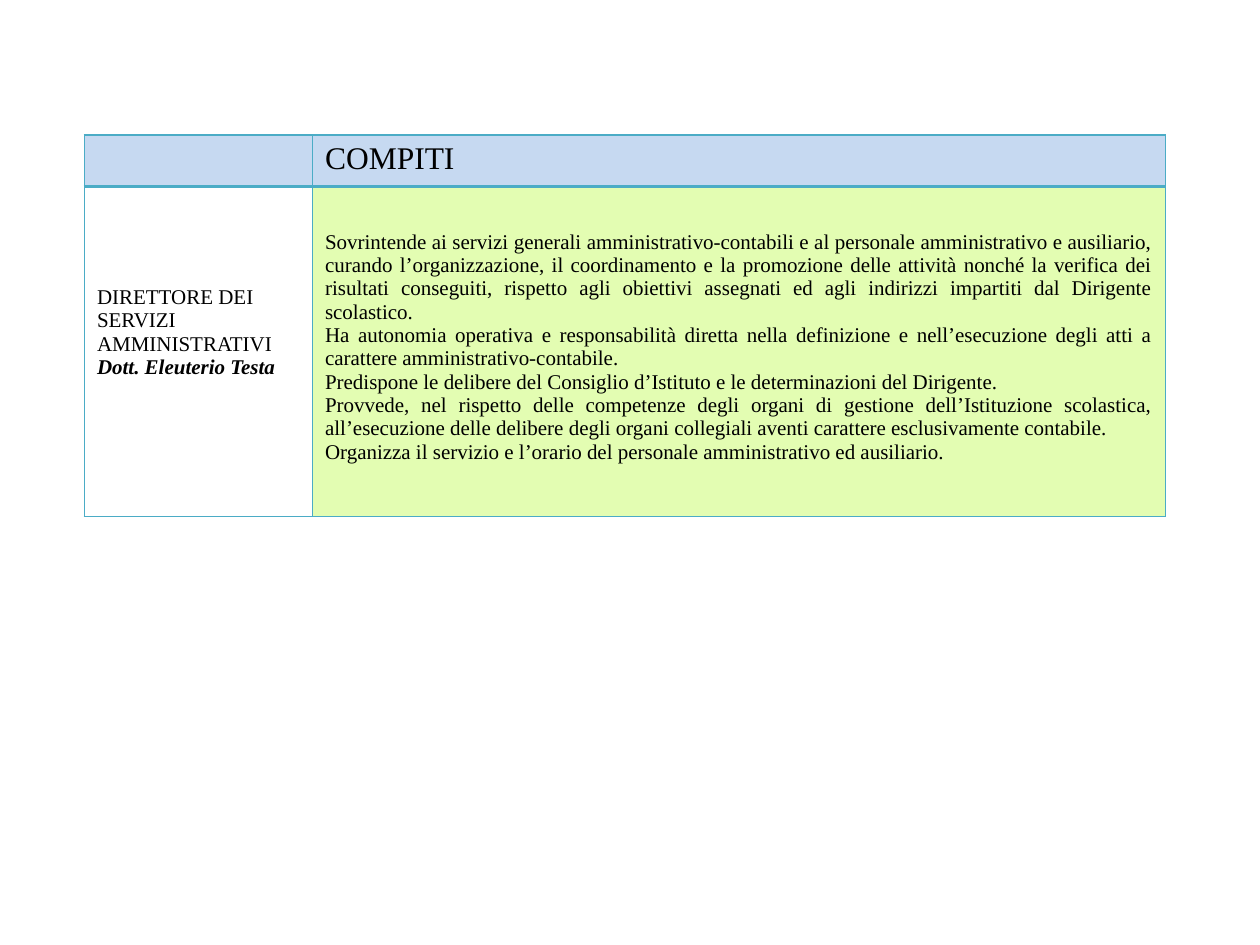
"""Build a slide with a table of the administrative director's duties."""
from lxml import etree
from pptx import Presentation
from pptx import util as u
from pptx.dml.color import RGBColor
from pptx.enum import text
from pptx.oxml.ns import qn

COLORS = {"border": "4BACC6", "header": "C6D9F1", "duties": "AFFC24", "text": "000000"}
LEFT, JUSTIFY = text.PP_ALIGN.LEFT, text.PP_ALIGN.JUSTIFY
ROLE = ["DIRETTORE DEI SERVIZI AMMINISTRATIVI", "Dott. Eleuterio Testa"]
DUTIES = [
    "Sovrintende ai servizi generali amministrativo‐contabili e al personale amministrativo e ausiliario, "
    "curando l’organizzazione, il coordinamento e la promozione delle attività nonché la verifica dei "
    "risultati conseguiti, rispetto agli obiettivi assegnati ed agli indirizzi impartiti dal Dirigente scolastico.",
    "Ha autonomia operativa e responsabilità diretta nella definizione e nell’esecuzione degli atti a "
    "carattere amministrativo‐contabile.",
    "Predispone le delibere del Consiglio d’Istituto e le determinazioni del Dirigente.",
    "Provvede, nel rispetto delle competenze degli organi di gestione dell’Istituzione scolastica, "
    "all’esecuzione delle delibere degli organi collegiali aventi carattere esclusivamente contabile.",
    "Organizza il servizio e l’orario del personale amministrativo ed ausiliario.",
]


def add_borders(cell, bottom_width):
    properties = cell._tc.get_or_add_tcPr()
    for side, width in (("L", 1), ("R", 1), ("T", 1), ("B", bottom_width)):
        line = etree.SubElement(properties, qn(f"a:ln{side}"), w=str(u.Pt(width)))
        fill = etree.SubElement(line, qn("a:solidFill"))
        etree.SubElement(fill, qn("a:srgbClr"), val=COLORS["border"])


def fill_cell(cell, lines, size, alignment, top_margin, color):
    cell.margin_top = u.Inches(top_margin)
    cell.text = "\n".join(lines)
    for paragraph in cell.text_frame.paragraphs:
        paragraph.alignment = alignment
        paragraph.font.name = "Times New Roman"
        paragraph.font.size = u.Pt(size)
        paragraph.font.color.rgb = RGBColor.from_string(COLORS["text"])
    if color:
        cell.fill.solid()
        cell.fill.fore_color.rgb = RGBColor.from_string(COLORS[color])
    else:
        cell.fill.background()


presentation = Presentation()
presentation.slide_width = u.Inches(10)
presentation.slide_height = u.Inches(7.5)
slide = presentation.slides.add_slide(presentation.slide_layouts[6])

table = slide.shapes.add_table(
    2, 2, u.Inches(0.67), u.Inches(1.07), u.Inches(8.58), u.Inches(3.03)
).table
table.first_row = False
table.horz_banding = False
for column, width in zip(table.columns, (1.81, 6.77)):
    column.width = u.Inches(width)
for row, height in zip(table.rows, (0.41, 2.62)):
    row.height = u.Inches(height)

contents = [
    [([], 18, LEFT, 0.05, "header"), (["COMPITI"], 18, LEFT, 0.05, "header")],
    [(ROLE, 12, LEFT, 0.79, None), (DUTIES, 12, JUSTIFY, 0.35, "duties")],
]
for row_index, (row, bottom_width) in enumerate(zip(contents, (2, 1))):
    for column_index, content in enumerate(row):
        cell = table.cell(row_index, column_index)
        add_borders(cell, bottom_width)
        fill_cell(cell, *content)

name_font = table.cell(1, 0).text_frame.paragraphs[1].font
name_font.bold = True
name_font.italic = True

duties_color = table.cell(1, 1)._tc.tcPr.find(f"{qn('a:solidFill')}/{qn('a:srgbClr')}")
etree.SubElement(duties_color, qn("a:alpha"), val="35000")

presentation.save("out.pptx")
